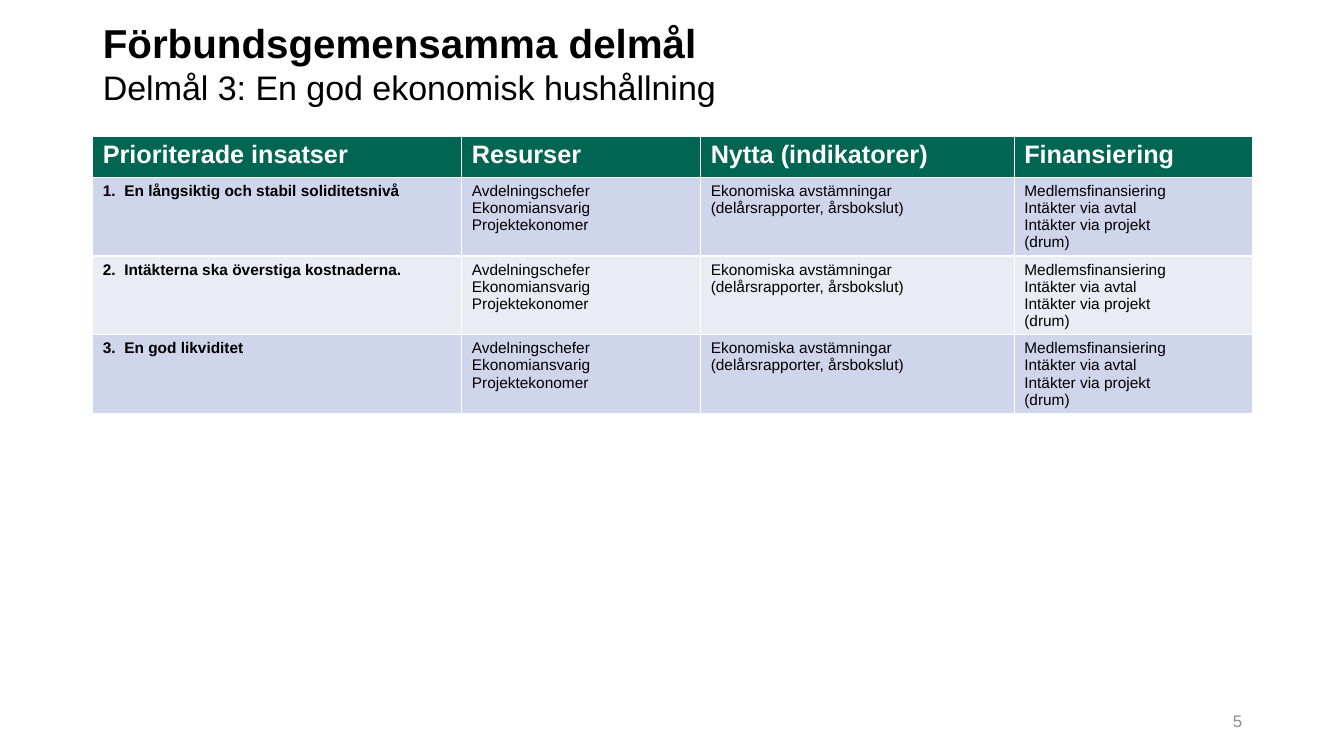
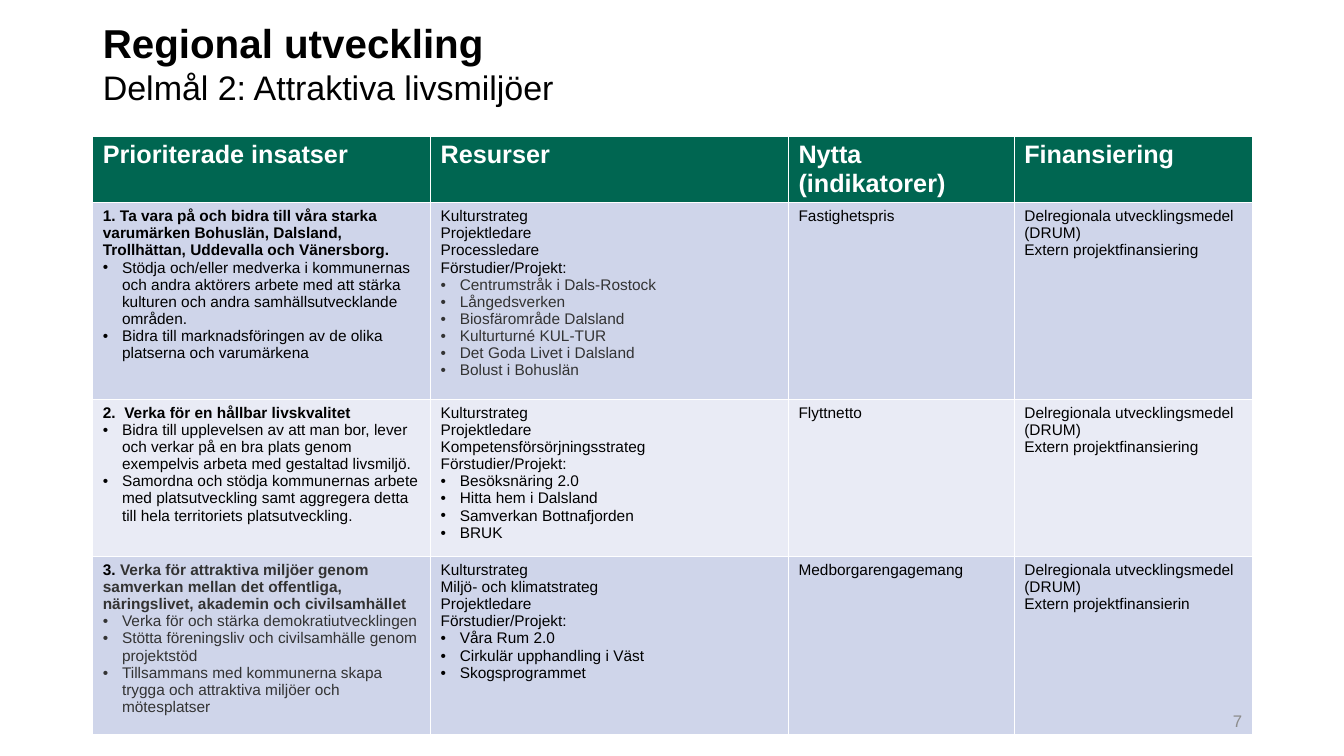
import lxml.etree
import pptx
import pptx.dml.color
import pptx.enum.text
import pptx.oxml.ns
import pptx.util

Inches = pptx.util.Inches
FONT = "Arial"
BLACK, WHITE, CHARCOAL, GREY = "000000", "FFFFFF", "333333", "8C8C8C"
GREEN = "006651"
BANDS = ("CFD5EA", "E9EBF5")
LEFT, WIDTH = 0.92, 11.5
TITLE_TOP, TITLE_HEIGHT = 0.37, 0.51
TABLE_TOP = 1.35
NUMBER_TOP, NUMBER_WIDTH, NUMBER_HEIGHT = 6.95, 3, 0.4
BULLET_INDENT = 0.19

HEADER_FORMAT = {"size": 18, "bold": True, "color": WHITE}
BODY_FORMAT = {"size": 11, "bold": False, "color": BLACK}
TITLE_FORMAT = {"size": 28.8, "bold": True, "color": BLACK}
SUBTITLE_FORMAT = {"size": 24.3, "bold": False, "color": BLACK}
NUMBER_FORMAT = {"size": 12, "bold": False, "color": GREY}


def plain(*lines):
    return [{"spans": [(line, {})]} for line in lines]


def heading(*parts):
    return [{"spans": [(text, {"bold": True, "color": color}) for text, color in parts]}]


def bullets(*lines, color=BLACK):
    return [{"spans": [(line, {"color": color})], "bullet": True} for line in lines]


HEADERS = ["Prioriterade insatser", "Resurser", "Nytta (indikatorer)", "Finansiering"]
ECONOMY_CELLS = [
    plain("Avdelningschefer", "Ekonomiansvarig", "Projektekonomer"),
    plain("Ekonomiska avstämningar (delårsrapporter, årsbokslut)"),
    plain("Medlemsfinansiering", "Intäkter via avtal", "Intäkter via projekt", "(drum)"),
]
ECONOMY_GOALS = [
    "1.  En långsiktig och stabil soliditetsnivå",
    "2.  Intäkterna ska överstiga kostnaderna.",
    "3.  En god likviditet",
]
FUNDING = "Delregionala utvecklingsmedel (DRUM)"

SLIDES = [
    {
        "title": "Förbundsgemensamma delmål",
        "subtitle": "Delmål 3: En god ekonomisk hushållning",
        "number": "5",
        "columns": [3.66, 2.37, 3.11, 2.36],
        "heights": [0.41, 0.78, 0.78, 0.78],
        "rows": [[heading((goal, BLACK))] + ECONOMY_CELLS for goal in ECONOMY_GOALS],
    },
    {
        "title": "Regional utveckling",
        "subtitle": "Delmål 2: Attraktiva livsmiljöer",
        "number": "7",
        "columns": [3.35, 3.55, 2.24, 2.36],
        "heights": [0.66, 1.95, 1.56, 1.77],
        "rows": [
            [
                heading(("1. Ta vara på och bidra till våra starka varumärken Bohuslän, "
                         "Dalsland, Trollhättan, Uddevalla och Vänersborg.", BLACK))
                + bullets(
                    "Stödja och/eller medverka i kommunernas och andra aktörers arbete med "
                    "att stärka kulturen och andra samhällsutvecklande områden.",
                    "Bidra till marknadsföringen av de olika platserna och varumärkena"),
                plain("Kulturstrateg", "Projektledare", "Processledare", "Förstudier/Projekt:")
                + bullets("Centrumstråk i Dals-Rostock", "Långedsverken",
                          "Biosfärområde Dalsland", "Kulturturné KUL-TUR",
                          "Det Goda Livet i Dalsland", "Bolust i Bohuslän", color=CHARCOAL),
                plain("Fastighetspris"),
                plain(FUNDING, "Extern projektfinansiering"),
            ],
            [
                heading(("2.  Verka för en hållbar livskvalitet", BLACK))
                + bullets(
                    "Bidra till upplevelsen av att man bor, lever och verkar på en bra plats "
                    "genom exempelvis arbeta med gestaltad livsmiljö.",
                    "Samordna och stödja kommunernas arbete med platsutveckling samt "
                    "aggregera detta till hela territoriets platsutveckling."),
                plain("Kulturstrateg", "Projektledare", "Kompetensförsörjningsstrateg",
                      "Förstudier/Projekt:")
                + bullets("Besöksnäring 2.0", "Hitta hem i Dalsland",
                          "Samverkan Bottnafjorden", "BRUK"),
                plain("Flyttnetto"),
                plain(FUNDING, "Extern projektfinansiering"),
            ],
            [
                heading(("3. ", BLACK),
                        ("Verka för attraktiva miljöer genom samverkan mellan det offentliga, "
                         "näringslivet, akademin och civilsamhället", CHARCOAL))
                + bullets(
                    "Verka för och stärka demokratiutvecklingen",
                    "Stötta föreningsliv och civilsamhälle genom projektstöd",
                    "Tillsammans med kommunerna skapa trygga och attraktiva miljöer och "
                    "mötesplatser", color=CHARCOAL),
                plain("Kulturstrateg", "Miljö- och klimatstrateg", "Projektledare",
                      "Förstudier/Projekt:")
                + bullets("Våra Rum 2.0", "Cirkulär upphandling i Väst", "Skogsprogrammet"),
                plain("Medborgarengagemang"),
                plain(FUNDING, "Extern projektfinansierin"),
            ],
        ],
    },
]


def rgb(color):
    return pptx.dml.color.RGBColor.from_string(color)


def add_bullet(para):
    properties = para._p.get_or_add_pPr()
    properties.set("marL", str(Inches(BULLET_INDENT)))
    properties.set("indent", str(-Inches(BULLET_INDENT)))
    for tag, name, value in (("a:buFont", "typeface", FONT), ("a:buChar", "char", "•")):
        element = lxml.etree.SubElement(properties, pptx.oxml.ns.qn(tag))
        element.set(name, value)


def write(frame, paragraphs, base, align=pptx.enum.text.PP_ALIGN.LEFT):
    for index, content in enumerate(paragraphs):
        para = frame.add_paragraph() if index else frame.paragraphs[0]
        para.alignment = align
        if content.get("bullet"):
            add_bullet(para)
        for text, changes in content["spans"]:
            look = {**base, **changes}
            span = para.add_run()
            span.text = text
            values = {"name": FONT, "size": pptx.util.Pt(look["size"]), "bold": look["bold"]}
            for name, value in values.items():
                setattr(span.font, name, value)
            span.font.color.rgb = rgb(look["color"])


def set_frame(frame):
    values = {
        "word_wrap": True,
        "auto_size": pptx.enum.text.MSO_AUTO_SIZE.NONE,
        "vertical_anchor": pptx.enum.text.MSO_ANCHOR.MIDDLE,
    }
    for name, value in values.items():
        setattr(frame, name, value)


def add_title(page, title, subtitle):
    box = page.shapes.title
    places = {"left": LEFT, "top": TITLE_TOP, "width": WIDTH, "height": TITLE_HEIGHT}
    for name, value in places.items():
        setattr(box, name, Inches(value))
    set_frame(box.text_frame)
    lines = [{"spans": [(title, {})]}, {"spans": [(subtitle, SUBTITLE_FORMAT)]}]
    write(box.text_frame, lines, TITLE_FORMAT)


def add_goal_table(page, columns, heights, rows):
    table = page.shapes.add_table(
        len(heights), len(columns), Inches(LEFT), Inches(TABLE_TOP),
        Inches(WIDTH), Inches(sum(heights))).table
    for column, width in zip(table.columns, columns):
        column.width = Inches(width)
    for row, height in zip(table.rows, heights):
        row.height = Inches(height)
    for row_index, cells in enumerate([[plain(text) for text in HEADERS]] + rows):
        fill = BANDS[(row_index - 1) % 2] if row_index else GREEN
        base = BODY_FORMAT if row_index else HEADER_FORMAT
        for column_index, paragraphs in enumerate(cells):
            cell = table.cell(row_index, column_index)
            cell.fill.solid()
            cell.fill.fore_color.rgb = rgb(fill)
            write(cell.text_frame, paragraphs, base)


def add_number(page, number):
    box = page.shapes.add_textbox(
        Inches(LEFT + WIDTH - NUMBER_WIDTH), Inches(NUMBER_TOP),
        Inches(NUMBER_WIDTH), Inches(NUMBER_HEIGHT))
    set_frame(box.text_frame)
    write(box.text_frame, plain(number), NUMBER_FORMAT, pptx.enum.text.PP_ALIGN.RIGHT)


def main():
    deck = pptx.Presentation()
    deck.slide_width, deck.slide_height = Inches(13.33), Inches(7.5)
    title_only = deck.slide_layouts.get_by_name("Title Only")
    for content in SLIDES:
        page = deck.slides.add_slide(title_only)
        add_title(page, content["title"], content["subtitle"])
        add_goal_table(page, content["columns"], content["heights"], content["rows"])
        add_number(page, content["number"])
    deck.save("out.pptx")


if __name__ == "__main__":
    main()
